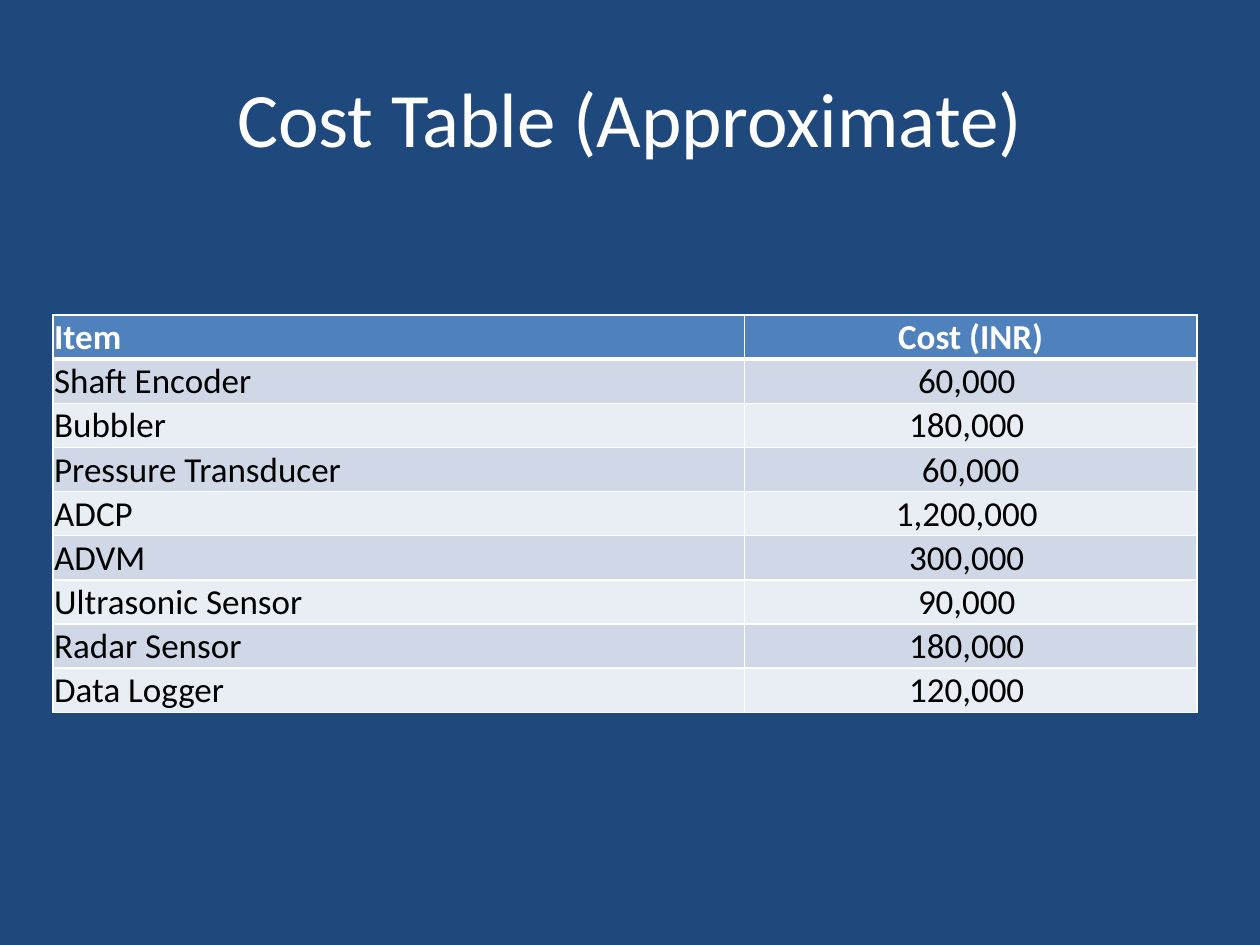
import pptx
import pptx.util
import pptx.dml.color
import pptx.enum.text
import pptx.oxml
import pptx.oxml.ns

Inches = pptx.util.Inches
Pt = pptx.util.Pt
ALIGN = pptx.enum.text.PP_ALIGN
ANCHOR = pptx.enum.text.MSO_ANCHOR

FONT = "Calibri"
NAVY, BLUE, WHITE, BLACK = "1F497D", "4F81BD", "FFFFFF", "000000"
BANDS = ["E9EDF4", "D0D8E8"]
# Most costs end in a space, which shifts the centred text a little
COSTS = [
    ("Item", "Cost (INR)"),
    ("Shaft Encoder", "60,000 "),
    ("Bubbler", "180,000 "),
    ("Pressure Transducer", "60,000"),
    ("ADCP", "1,200,000 "),
    ("ADVM", "300,000 "),
    ("Ultrasonic Sensor", "90,000 "),
    ("Radar Sensor", "180,000 "),
    ("Data Logger", "120,000 "),
]
WIDTHS = [5.49, 3.59]
ROW = 0.35


def paint(fill, color):
    fill.solid()
    fill.fore_color.rgb = pptx.dml.color.RGBColor.from_string(color)


def add_run(para, text, size, color, bold=False):
    run = para.add_run()
    run.text = text
    run.font.name = FONT
    run.font.size = Pt(size)
    run.font.bold = bold
    run.font.color.rgb = pptx.dml.color.RGBColor.from_string(color)


def add_title(slide, text):
    title = slide.shapes.title
    title.left, title.top = Inches(0.5), Inches(0.3)
    title.width, title.height = Inches(9), Inches(1.25)
    title.text_frame.vertical_anchor = ANCHOR.MIDDLE
    para = title.text_frame.paragraphs[0]
    para.alignment = ALIGN.CENTER
    add_run(para, text, 44, WHITE)


def add_edges(cell, top, bottom):
    props = cell._tc.get_or_add_tcPr()
    for side, width in (("L", 1), ("R", 1), ("T", top), ("B", bottom)):
        props.append(pptx.oxml.parse_xml(
            f'<a:ln{side} {pptx.oxml.ns.nsdecls("a")} w="{Pt(width)}">'
            f'<a:solidFill><a:srgbClr val="{WHITE}"/></a:solidFill>'
            f'</a:ln{side}>'))


def fill_cell(cell, text, row, col):
    head = row == 0
    # The rule under the header is thicker
    add_edges(cell, 3 if row == 1 else 1, 3 if head else 1)
    paint(cell.fill, BLUE if head else BANDS[row % 2])
    cell.margin_left = cell.margin_right = cell.margin_top = Inches(0.01)
    cell.margin_bottom = 0
    cell.vertical_anchor = ANCHOR.BOTTOM if col else ANCHOR.MIDDLE
    para = cell.text_frame.paragraphs[0]
    para.alignment = ALIGN.CENTER if col else ALIGN.LEFT
    add_run(para, text, 20, WHITE if head else BLACK, head)


def add_costs(slide):
    frame = slide.shapes.add_table(
        len(COSTS), len(WIDTHS), Inches(0.42), Inches(2.5),
        Inches(sum(WIDTHS)), Inches(ROW * len(COSTS)))
    table = frame.table
    for col, width in zip(table.columns, WIDTHS):
        col.width = Inches(width)
    for r, texts in enumerate(COSTS):
        table.rows[r].height = Inches(ROW)
        for c, text in enumerate(texts):
            fill_cell(table.cell(r, c), text, r, c)


def main():
    deck = pptx.Presentation()
    deck.slide_width, deck.slide_height = Inches(10), Inches(7.5)
    # Title-only layout on a navy ground
    slide = deck.slides.add_slide(deck.slide_layouts[5])
    paint(slide.background.fill, NAVY)
    add_title(slide, "Cost Table (Approximate)")
    add_costs(slide)
    deck.save("out.pptx")


if __name__ == "__main__":
    main()
